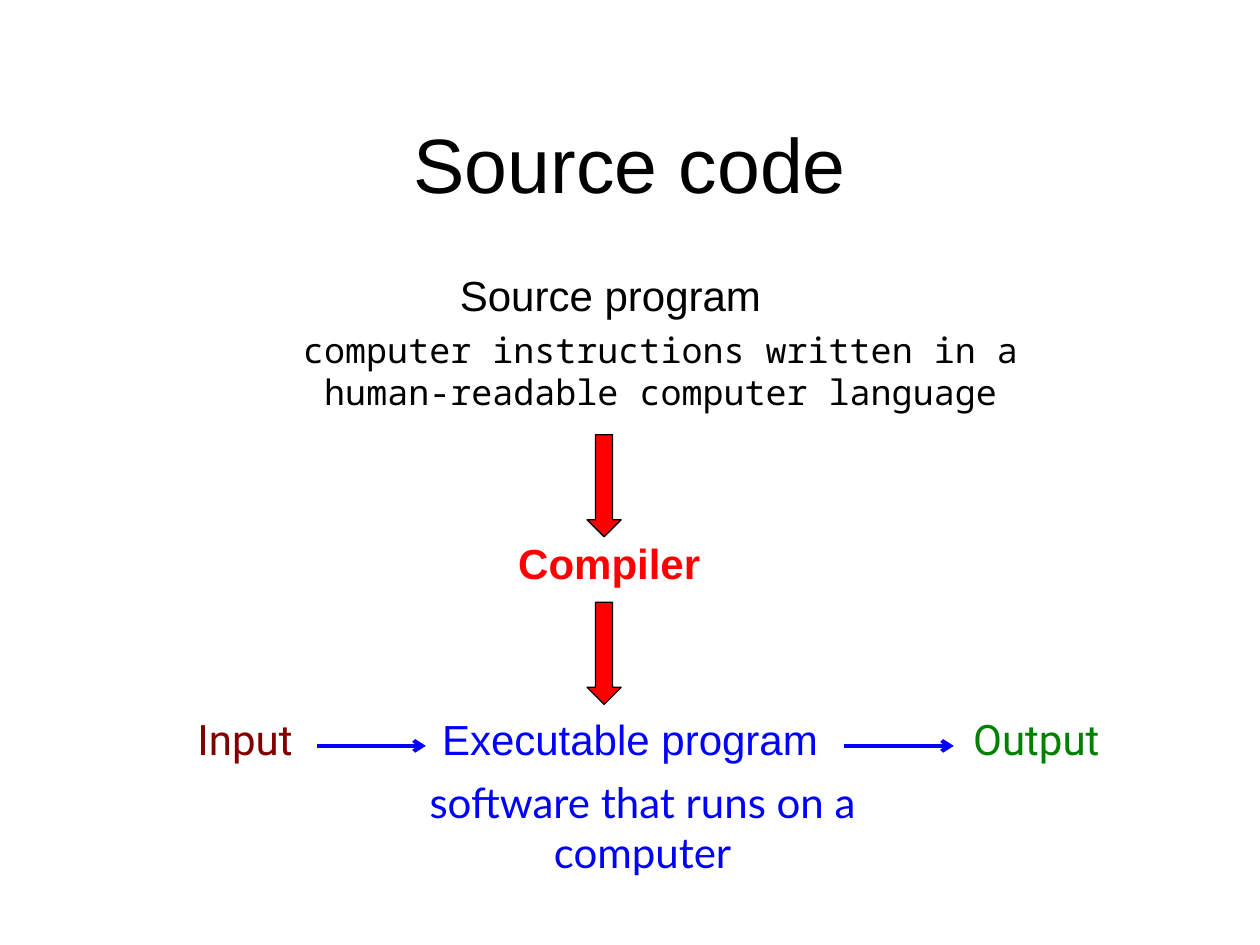
from dataclasses import dataclass

from lxml import etree
from pptx import Presentation
from pptx import util as u
from pptx.dml.color import RGBColor
from pptx.enum import shapes, text
from pptx.oxml import ns


@dataclass(frozen=True)
class Theme:
    black: str = "000000"
    red: str = "FF0000"
    blue: str = "0000FF"
    maroon: str = "800000"
    green: str = "008000"
    sans: str = "Arial"
    mono: str = "Noto Sans Mono"
    label: str = "Roboto"
    note: str = "Lato"
    title_size: int = 44
    text_size: int = 24
    mono_size: int = 20
    outline: float = 0.75
    flow_line: float = 2.25


THEME = Theme()


@dataclass(frozen=True)
class Label:
    words: str
    left: float
    top: float
    width: float
    height: float
    color: str
    font: str = THEME.sans
    size: int = THEME.text_size
    bold: bool = False


FLOW_TOP, FLOW_HEIGHT, FLOW_LINE_Y = 5.61, 0.51, 5.92

TITLE = Label("Source code", 0.75, 0.67, 8.5, 1.25, THEME.black, size=THEME.title_size)
LABELS = [
    Label("Source program", 3.33, 2.09, 3.03, 0.51, THEME.black),
    Label("Compiler", 3.8, 4.22, 2.07, 0.51, THEME.red, bold=True),
    Label("Executable program", 3.25, FLOW_TOP, 3.5, FLOW_HEIGHT, THEME.blue),
    Label("Input", 1.06, FLOW_TOP, 1.77, FLOW_HEIGHT, THEME.maroon, THEME.label),
    Label("Output", 7.29, FLOW_TOP, 1.87, FLOW_HEIGHT, THEME.green, THEME.label),
    Label("computer instructions written in a human-readable computer language",
          1.94, 2.56, 6.61, 0.77, THEME.black, THEME.mono, THEME.mono_size),
    Label("software that runs on a computer", 3.03, 6.11, 4.14, 0.91,
          THEME.blue, THEME.note),
]
BLOCK_ARROW_TOPS = (3.45, 4.78)
FLOW_SPANS = ((2.52, 3.38), (6.7, 7.57))


def set_all(target, values: dict) -> None:
    for name, value in values.items():
        setattr(target, name, value)


def write_label(shape, label: Label, anchor) -> None:
    """Place a text shape and format its single paragraph."""
    set_all(shape, {"left": u.Inches(label.left), "top": u.Inches(label.top),
                    "width": u.Inches(label.width), "height": u.Inches(label.height)})
    set_all(shape.text_frame, {"word_wrap": True, "vertical_anchor": anchor})
    paragraph = shape.text_frame.paragraphs[0]
    paragraph.alignment = text.PP_ALIGN.CENTER
    run = paragraph.add_run()
    run.text = label.words
    set_all(run.font, {"name": label.font, "size": u.Pt(label.size), "bold": label.bold})
    run.font.color.rgb = RGBColor.from_string(label.color)


def add_label(slide, label: Label) -> None:
    shape = slide.shapes.add_textbox(0, 0, 0, 0)
    write_label(shape, label, text.MSO_ANCHOR.TOP)


def add_block_arrow(slide, top: float) -> None:
    shape = slide.shapes.add_shape(shapes.MSO_SHAPE.DOWN_ARROW, u.Inches(4.66),
                                   u.Inches(top), u.Inches(0.27), u.Inches(0.81))
    shape.shadow.inherit = False
    shape.fill.solid()
    shape.fill.fore_color.rgb = RGBColor.from_string(THEME.red)
    shape.line.color.rgb = RGBColor.from_string(THEME.black)
    shape.line.width = u.Pt(THEME.outline)


def add_flow_arrow(slide, start: float, end: float) -> None:
    connector = slide.shapes.add_connector(
        shapes.MSO_CONNECTOR.STRAIGHT, u.Inches(start), u.Inches(FLOW_LINE_Y),
        u.Inches(end), u.Inches(FLOW_LINE_Y))
    connector.line.color.rgb = RGBColor.from_string(THEME.blue)
    connector.line.width = u.Pt(THEME.flow_line)
    properties = connector._element.spPr
    etree.SubElement(properties.find(ns.qn("a:ln")), ns.qn("a:tailEnd"), type="arrow")
    etree.SubElement(properties, ns.qn("a:effectLst"))


def main() -> None:
    presentation = Presentation()
    set_all(presentation, {"slide_width": u.Inches(10), "slide_height": u.Inches(7.5)})
    slide = presentation.slides.add_slide(presentation.slide_layouts[5])

    # Title and texts
    write_label(slide.shapes.title, TITLE, text.MSO_ANCHOR.MIDDLE)
    for label in LABELS:
        add_label(slide, label)

    # Compilation steps, top to bottom
    for top in BLOCK_ARROW_TOPS:
        add_block_arrow(slide, top)

    # Input to output, left to right
    for start, end in FLOW_SPANS:
        add_flow_arrow(slide, start, end)

    presentation.save("out.pptx")


if __name__ == "__main__":
    main()
